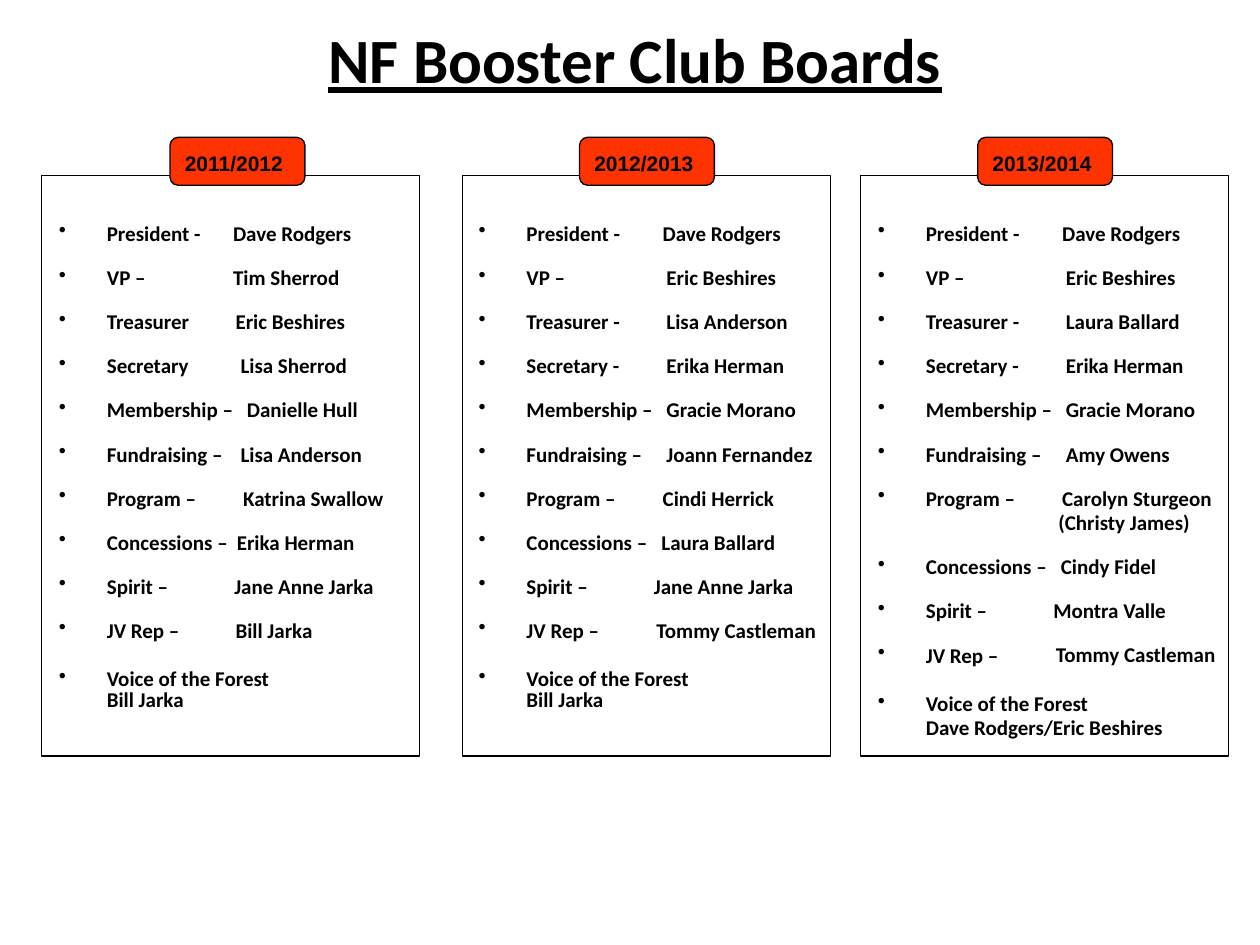
from lxml import etree
from pptx import Presentation
from pptx import util as u
from pptx.dml.color import RGBColor
from pptx.enum import shapes, text
from pptx.oxml.ns import qn

presentation = Presentation()
presentation.slide_width, presentation.slide_height = u.Inches(10), u.Inches(7.5)
slide = presentation.slides.add_slide(presentation.slide_layouts[5])

PANEL_TOP, PANEL_HEIGHT = 1.39, 4.61
LIST_TOP, LIST_HEIGHT = 1.74, 4.2
NAME_OFFSET, HANGING = 1.48, 0.38
ROW_GAP, LINE_GAP, VOICE_GAP, EXTRA_LINE = 13.7, 2.4, 16.2, 14.1


def style(item, size, font="Calibri", color="000000"):
    item.font.name, item.font.size, item.font.bold = font, u.Pt(size), True
    item.font.color.rgb = RGBColor.from_string(color)


def add_lines(left, width, side_inset, lines):
    """Each line is (text, space before in points, indent in inches, bulleted)."""
    box = slide.shapes.add_textbox(u.Inches(left), u.Inches(LIST_TOP),
                                   u.Inches(width), u.Inches(LIST_HEIGHT))
    frame = box.text_frame
    frame.word_wrap = True
    frame.margin_left = frame.margin_right = u.Inches(side_inset)
    for index, (words, gap, indent, bulleted) in enumerate(lines):
        paragraph = frame.add_paragraph() if index else frame.paragraphs[0]
        paragraph.text = words
        style(paragraph, 12)
        paragraph.line_spacing = 0.8
        paragraph.space_before = u.Pt(gap if index else 0)
        properties = paragraph._p.get_or_add_pPr()
        properties.set("marL", str(u.Inches(indent)))
        if bulleted:
            properties.set("indent", str(-u.Inches(indent)))
            bullet = etree.Element(qn("a:buChar"), char="•")
            properties.insert_element_before(bullet, "a:tabLst", "a:defRPr", "a:extLst")


# Title
title = slide.shapes.title
title.left, title.top = u.Inches(0.54), u.Inches(-0.16)
title.width, title.height = u.Inches(9), u.Inches(1.25)
title.text_frame.text = "NF Booster Club Boards"
title.text_frame.vertical_anchor = text.MSO_ANCHOR.MIDDLE
heading = title.text_frame.paragraphs[0]
heading.alignment = text.PP_ALIGN.CENTER
style(heading, 36)
heading.font.underline = True

# Boards: year, panel left and width, tag left, list left, roles, names, name indents
first_roles = ["President -", "VP –", "Treasurer", "Secretary", "Membership –",
               "Fundraising –", "Program –", "Concessions –", "Spirit –", "JV Rep –"]
later_roles = first_roles[:2] + ["Treasurer -", "Secretary -"] + first_roles[4:]
first_indents = [0, 0, 0.02, 0.06, 0.11, 0.06, 0.08, 0.03, 0.01, 0.02]
later_indents = [0.08, 0.11, 0.11, 0.11, 0.11, 0.11, 0.08, 0.07, 0.01, 0.03]
boards = [
    ("2011/2012", 0.33, 3, 1.35, 0.37, first_roles,
     ["Dave Rodgers", "Tim Sherrod", "Eric Beshires", "Lisa Sherrod", "Danielle Hull",
      "Lisa Anderson", "Katrina Swallow", "Erika Herman", "Jane Anne Jarka", "Bill Jarka"],
     first_indents),
    ("2012/2013", 3.67, 2.92, 4.6, 3.7, later_roles,
     ["Dave Rodgers", "Eric Beshires", "Lisa Anderson", "Erika Herman", "Gracie Morano",
      "Joann Fernandez", "Cindi Herrick", "Laura Ballard", "Jane Anne Jarka",
      "Tommy Castleman"],
     later_indents),
    ("2013/2014", 6.83, 2.92, 7.76, 6.87, later_roles,
     ["Dave Rodgers", "Eric Beshires", "Laura Ballard", "Erika Herman", "Gracie Morano",
      "Amy Owens", "Carolyn Sturgeon", "Cindy Fidel", "Montra Valle", "Tommy Castleman"],
     later_indents),
]

for year, left, width, tag_left, list_left, roles, names, indents in boards:
    # Panel and year tag
    panel = slide.shapes.add_shape(shapes.MSO_SHAPE.RECTANGLE, u.Inches(left),
                                   u.Inches(PANEL_TOP), u.Inches(width), u.Inches(PANEL_HEIGHT))
    panel.fill.background()
    tag = slide.shapes.add_shape(shapes.MSO_SHAPE.ROUNDED_RECTANGLE, u.Inches(tag_left),
                                 u.Inches(1.09), u.Inches(1.07), u.Inches(0.38))
    tag.fill.solid()
    tag.fill.fore_color.rgb = RGBColor.from_string("FF3300")
    for shape in (panel, tag):
        shape.shadow.inherit = False
        shape.line.color.rgb = RGBColor.from_string("000000")
        shape.line.width = u.Pt(0.75)
    tag.text_frame.text = year
    tag.text_frame.margin_bottom = u.Inches(0.02)
    style(tag.text_frame.paragraphs[0], 12, "Arial")

    # Roles on the left, holders on the right
    role_lines = [(role, ROW_GAP, HANGING, True) for role in roles]
    name_lines = [(name, ROW_GAP, indent, False) for name, indent in zip(names, indents)]
    if year == "2013/2014":
        name_lines.insert(7, ("(Christy James)", LINE_GAP, 0.05, False))
        role_lines[7] = (roles[7], ROW_GAP + EXTRA_LINE, HANGING, True)
        role_lines += [("Voice of the Forest", VOICE_GAP, HANGING, True),
                       ("Dave Rodgers/Eric Beshires", LINE_GAP, HANGING, False)]
    else:
        role_lines.append(("Voice of the Forest\vBill Jarka", VOICE_GAP, HANGING, True))
    add_lines(list_left, 2.8, 0.1, role_lines)
    add_lines(list_left + NAME_OFFSET, 1.5, 0, name_lines)

presentation.save("out.pptx")
